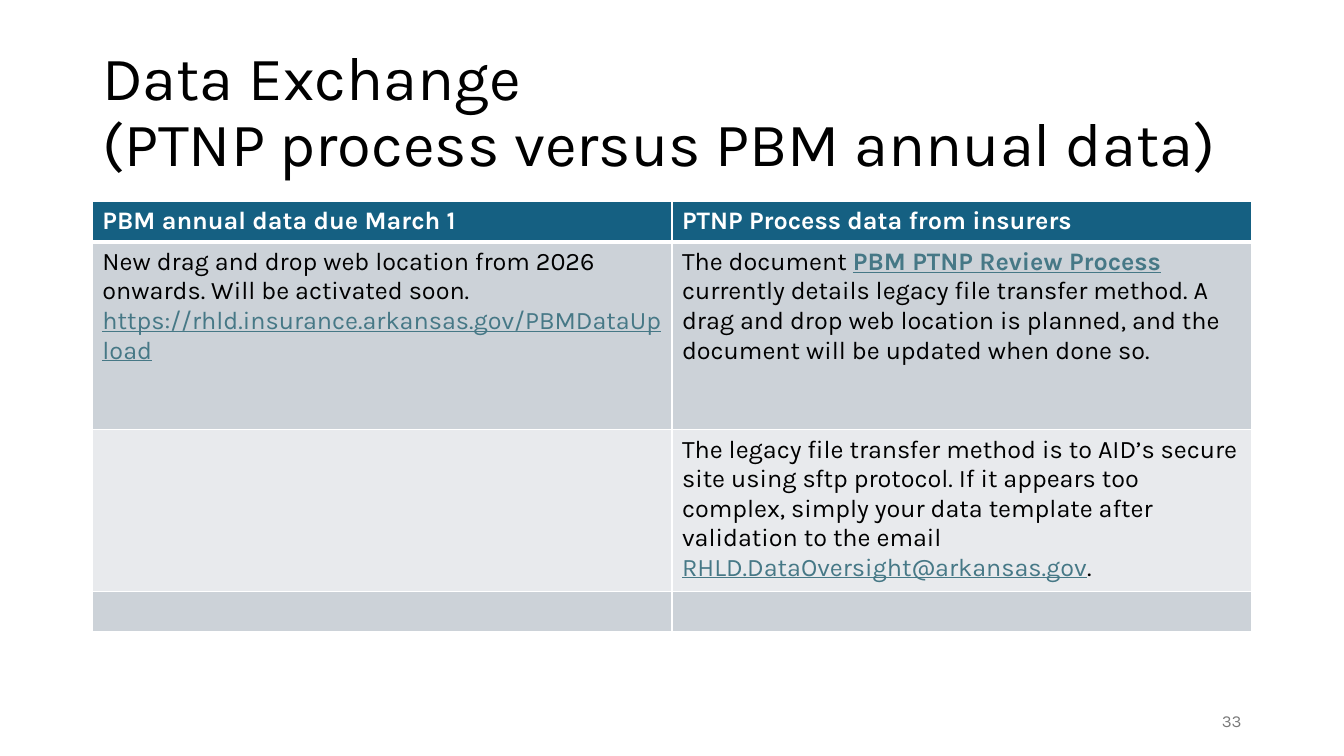
from lxml import etree
from pptx import Presentation
from pptx.dml import color
from pptx.enum import text
from pptx.oxml import ns
from pptx.util import Pt

BLACK, WHITE, GREY = "000000", "FFFFFF", "797979"
TEAL, LINK, DARK_BAND, LIGHT_BAND = "156082", "467886", "CCD2D8", "E8EAED"
LEFT, WIDTH = 66, 828


def rgb(value):
    return color.RGBColor.from_string(value)


def add_text(p, content, size=18, fill=BLACK, bold=False, underline=False):
    r = p.add_run()
    r.text = content
    r.font.name = "Karla"
    r.font.size = Pt(size)
    r.font.bold = bold
    r.font.underline = underline
    r.font.color.rgb = rgb(fill)


def add_box(slide, left, top, width, height, align=text.PP_ALIGN.LEFT):
    tf = slide.shapes.add_textbox(Pt(left), Pt(top), Pt(width), Pt(height)).text_frame
    tf.word_wrap = True
    tf.vertical_anchor = text.MSO_ANCHOR.MIDDLE
    p = tf.paragraphs[0]
    p.alignment = align
    return p


def add_border(cell, side, width):
    tcPr = cell._tc.get_or_add_tcPr()
    ln = etree.SubElement(tcPr, ns.qn(f"a:ln{side}"), w=str(Pt(width)))
    solid = etree.SubElement(ln, ns.qn("a:solidFill"))
    etree.SubElement(solid, ns.qn("a:srgbClr"), val=WHITE)


def add_data_table(slide, rows, top, heights, fills):
    columns = len(rows[0])
    frame = slide.shapes.add_table(len(rows), columns, Pt(LEFT), Pt(top), Pt(WIDTH), Pt(sum(heights)))
    table = frame.table
    for column in table.columns:
        column.width = Pt(WIDTH / columns)
    for i, (row, height, fill) in enumerate(zip(rows, heights, fills)):
        table.rows[i].height = Pt(height)
        for j, runs in enumerate(row):
            cell = table.cell(i, j)
            for side in "LRTB":
                header_edge = (i, side) in ((0, "B"), (1, "T"))
                add_border(cell, side, 3 if header_edge else 1)
            cell.fill.solid()
            cell.fill.fore_color.rgb = rgb(fill)
            for content, style in runs:
                add_text(cell.text_frame.paragraphs[0], content, **style)


def main():
    prs = Presentation()
    prs.slide_width, prs.slide_height = Pt(960), Pt(540)
    slide = prs.slides.add_slide(prs.slide_layouts[6])

    title = add_box(slide, LEFT, 28.75, WIDTH, 104.4)
    title.line_spacing = 0.9
    add_text(title, "Data Exchange", size=44)
    title.add_line_break()
    add_text(title, "(PTNP process versus PBM annual data)", size=44)

    header = dict(fill=WHITE, bold=True)
    link = dict(fill=LINK, underline=True)
    rows = [
        [
            [("PBM annual data due March 1", header)],
            [("PTNP Process data from insurers", header)],
        ],
        [
            [
                ("New drag and drop web location from 2026 onwards. Will be activated soon. ", {}),
                ("https://rhld.insurance.arkansas.gov/PBMDataUpload", link),
            ],
            [
                ("The document ", {}),
                ("PBM PTNP Review Process", dict(link, bold=True)),
                (" currently details legacy file transfer method. A drag and drop web "
                 "location is planned, and the document will be updated when done so.", {}),
            ],
        ],
        [
            [],
            [
                ("The legacy file transfer method is to AID’s secure site using sftp protocol. "
                 "If it appears too complex, simply your data template after validation "
                 "to the email ", {}),
                ("RHLD.DataOversight@arkansas.gov", link),
                (".", {}),
            ],
        ],
        [[], []],
    ]
    add_data_table(slide, rows, 144, [29, 134, 112.5, 29], [TEAL, DARK_BAND, LIGHT_BAND, DARK_BAND])

    number = add_box(slide, 678, 500.5, 216, 28.75, text.PP_ALIGN.RIGHT)
    add_text(number, "33", size=12, fill=GREY)

    prs.save("out.pptx")


if __name__ == "__main__":
    main()
